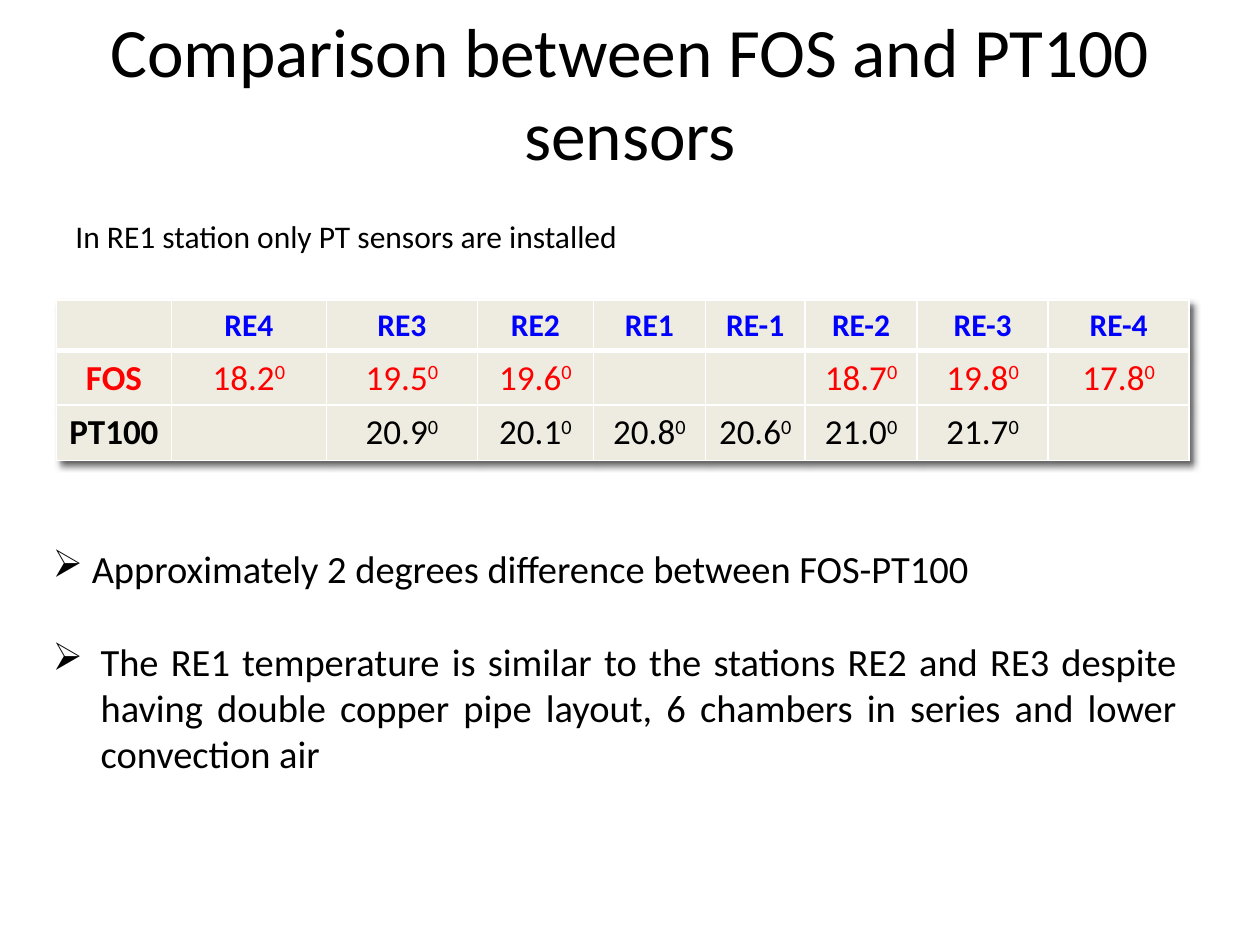
from lxml.etree import SubElement
from pptx import Presentation
from pptx.dml.color import RGBColor
from pptx.enum.text import MSO_ANCHOR, PP_ALIGN
from pptx.oxml import parse_xml
from pptx.oxml.ns import nsdecls, qn
from pptx.util import Inches, Pt

FONT = "Calibri"
COLORS = {
    "text": "000000",
    "station": "0000FF",
    "fos": "FF0000",
    "cell": "EEECE1",
    "border": "FFFFFF",
}
STATIONS = ["RE4", "RE3", "RE2", "RE1", "RE-1", "RE-2", "RE-3", "RE-4"]
FOS = ["18.2", "19.5", "19.6", "", "", "18.7", "19.8", "17.8"]
PT100 = ["", "20.9", "20.1", "20.8", "20.6", "21.0", "21.7", ""]
COLUMN_WIDTHS = [0.91, 1.23, 1.2, 0.92, 0.89, 0.79, 0.89, 1.04, 1.12]
ROW_HEIGHTS = [0.4, 0.43, 0.44]
FINDINGS = [
    ("Approximately 2 degrees difference between FOS-PT100", 0.31),
    ("The RE1 temperature is similar to the stations RE2 and RE3 despite "
     "having double copper pipe layout, 6 chambers in series and lower "
     "convection air", 0.38),
]


def add_run(paragraph, text, size, color="text", bold=False):
    run = paragraph.add_run()
    run.text = text
    run.font.name = FONT
    run.font.size = Pt(size)
    run.font.bold = bold
    run.font.color.rgb = RGBColor.from_string(COLORS[color])
    return run


def add_text_frame(slide, left, top, width, height):
    frame = slide.shapes.add_textbox(
        Inches(left), Inches(top), Inches(width), Inches(height)).text_frame
    frame.word_wrap = True
    return frame


def add_title(slide, text):
    frame = add_text_frame(slide, 0.5, 0.1, 9, 1.25)
    frame.vertical_anchor = MSO_ANCHOR.MIDDLE
    heading = frame.paragraphs[0]
    heading.alignment = PP_ALIGN.CENTER
    add_run(heading, text, 39.6)


def add_note(slide, text):
    frame = add_text_frame(slide, 0.5, 1.67, 7.11, 0.4)
    add_run(frame.paragraphs[0], text, 18)


def set_bullet(paragraph, indent):
    properties = paragraph._p.get_or_add_pPr()
    properties.set("marL", str(Inches(indent)))
    properties.set("indent", str(-Inches(indent)))
    SubElement(properties, qn("a:buChar"), char="➢")


def add_findings(slide):
    frame = add_text_frame(slide, 0.32, 4.28, 9.12, 1.95)
    for number, (text, indent) in enumerate(FINDINGS):
        finding = frame.add_paragraph() if number else frame.paragraphs[0]
        finding.alignment = PP_ALIGN.JUSTIFY
        if number:
            finding.space_before = Pt(26.5)
        set_bullet(finding, indent)
        add_run(finding, text, 22)


def style_cell(cell, row):
    """Fill the cell and border it, with a thick rule below the header."""
    widths = {"L": 1, "R": 1, "T": 3 if row == 1 else 1, "B": 3 if row == 0 else 1}
    properties = cell._tc.get_or_add_tcPr()
    for side, width in widths.items():
        properties.append(parse_xml(
            f'<a:ln{side} {nsdecls("a")} w="{Pt(width)}"><a:solidFill>'
            f'<a:srgbClr val="{COLORS["border"]}"/></a:solidFill></a:ln{side}>'))
    cell.fill.solid()
    cell.fill.fore_color.rgb = RGBColor.from_string(COLORS["cell"])


def add_table_shadow(table):
    table._tbl.tblPr.insert(0, parse_xml(
        f'<a:effectLst {nsdecls("a")}>'
        '<a:outerShdw blurRad="50800" dist="38100" dir="2700000" algn="tl">'
        '<a:srgbClr val="000000"><a:alpha val="60000"/></a:srgbClr>'
        '</a:outerShdw></a:effectLst>'))


def add_temperatures(slide):
    rows = [
        ([""] + STATIONS, 18, "station"),
        (["FOS"] + FOS, 20, "fos"),
        (["PT100"] + PT100, 20, "text"),
    ]
    table = slide.shapes.add_table(
        len(rows), len(COLUMN_WIDTHS), Inches(0.45), Inches(2.38),
        Inches(sum(COLUMN_WIDTHS)), Inches(sum(ROW_HEIGHTS))).table
    table.horz_banding = False
    add_table_shadow(table)
    for column, width in zip(table.columns, COLUMN_WIDTHS):
        column.width = Inches(width)
    for r, (values, size, color) in enumerate(rows):
        table.rows[r].height = Inches(ROW_HEIGHTS[r])
        for c, value in enumerate(values):
            cell = table.cell(r, c)
            style_cell(cell, r)
            if not value:
                continue
            is_reading = r > 0 and c > 0
            entry = cell.text_frame.paragraphs[0]
            entry.alignment = PP_ALIGN.CENTER
            add_run(entry, value, size, color, bold=not is_reading)
            if is_reading:
                degree = add_run(entry, "0", size, color)
                degree.font._element.set("baseline", "30000")


def main():
    presentation = Presentation()
    presentation.slide_width = Inches(10)
    presentation.slide_height = Inches(7.5)
    slide = presentation.slides.add_slide(presentation.slide_layouts[6])
    add_title(slide, "Comparison between FOS and PT100 sensors")
    add_temperatures(slide)
    add_findings(slide)
    add_note(slide, "In RE1 station only PT sensors are installed")
    presentation.save("out.pptx")


if __name__ == "__main__":
    main()
